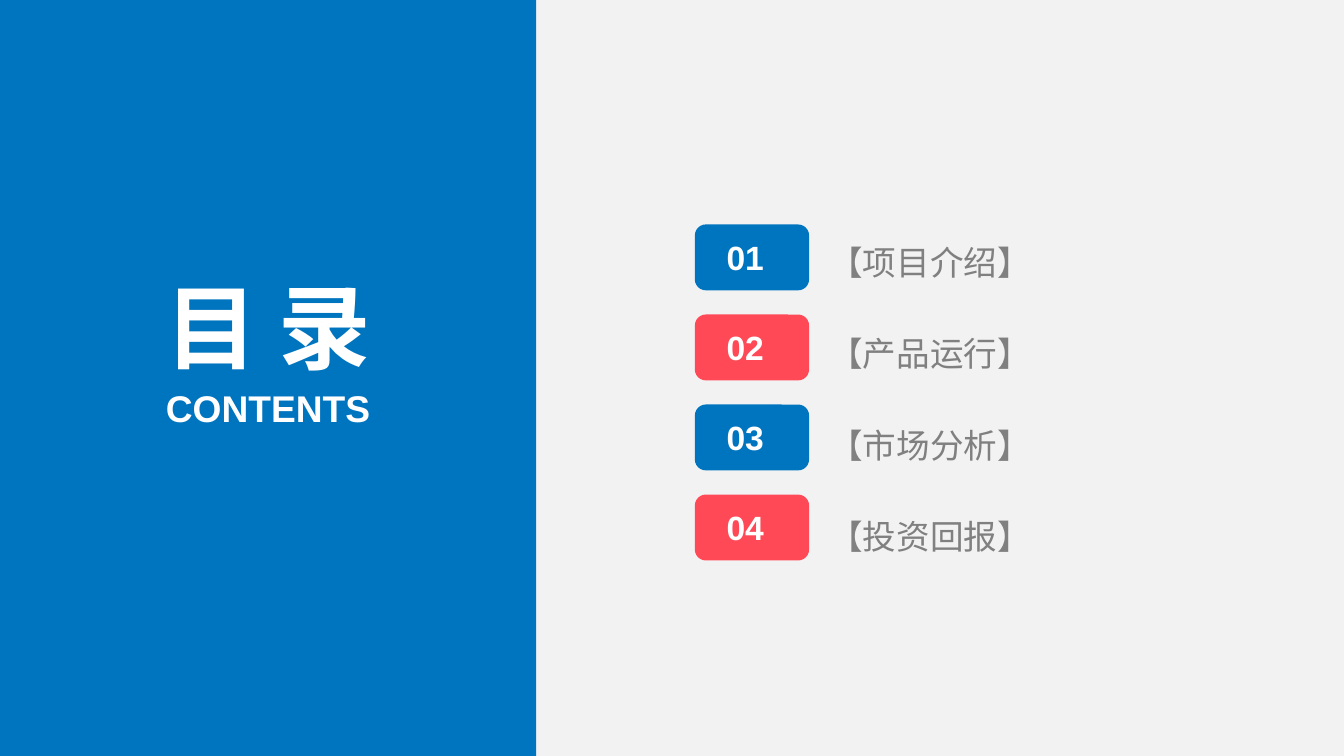
from pptx import Presentation
from pptx.dml.color import RGBColor
from pptx.enum.shapes import MSO_SHAPE
from pptx.enum.text import MSO_ANCHOR, MSO_AUTO_SIZE, PP_ALIGN
from pptx.util import Inches, Pt

RECTANGLE, ROUNDED = MSO_SHAPE.RECTANGLE, MSO_SHAPE.ROUNDED_RECTANGLE
TOP, MIDDLE = MSO_ANCHOR.TOP, MSO_ANCHOR.MIDDLE
CENTER, LEFT = PP_ALIGN.CENTER, PP_ALIGN.LEFT
GROW, FIXED = MSO_AUTO_SIZE.SHAPE_TO_FIT_TEXT, MSO_AUTO_SIZE.NONE

# Content
TITLE = "目 录"
SUBTITLE = "CONTENTS"
SECTIONS = ["【项目介绍】", "【产品运行】", "【市场分析】", "【投资回报】"]

# Style and layout, in inches
COLORS = {"blue": "0075BF", "red": "FF4957", "white": "FFFFFF",
          "gray": "808080", "background": "F2F2F2"}
BADGE_COLORS = ["blue", "red"]
FONT = "Arial"
SLIDE_WIDTH = 10
SLIDE_HEIGHT = SLIDE_WIDTH * 9 / 16
PANEL_WIDTH = 3.99
BADGE_TOP, LABEL_TOP = 1.67, 1.61
BADGE_PITCH, LABEL_PITCH = 0.67, 0.68


def color(name):
    return RGBColor.from_string(COLORS[name])


def place(shape, left, top, width, height):
    shape.left, shape.top = Inches(left), Inches(top)
    shape.width, shape.height = Inches(width), Inches(height)


def write(shape, text, size, color_name, bold=False, align=CENTER, anchor=TOP,
          insets=(0, 0, 0, 0), wrap=False, fit=GROW):
    frame = shape.text_frame
    frame.word_wrap, frame.auto_size, frame.vertical_anchor = wrap, fit, anchor
    (frame.margin_left, frame.margin_top,
     frame.margin_right, frame.margin_bottom) = map(Inches, insets)
    paragraph = frame.paragraphs[0]
    paragraph.alignment = align
    run = paragraph.add_run()
    run.text = text
    run.font.name, run.font.size, run.font.bold = FONT, Pt(size), bold
    run.font.color.rgb = color(color_name)
    return paragraph


def add_block(slide, kind, box, color_name):
    shape = slide.shapes.add_shape(kind, *map(Inches, box))
    shape.shadow.inherit = False
    shape.fill.solid()
    shape.fill.fore_color.rgb = color(color_name)
    shape.line.fill.background()
    return shape


presentation = Presentation()
presentation.slide_width = Inches(SLIDE_WIDTH)
presentation.slide_height = Inches(SLIDE_HEIGHT)
slide = presentation.slides.add_slide(presentation.slide_layouts[5])
slide.background.fill.solid()
slide.background.fill.fore_color.rgb = color("background")

# Left panel, sent behind the title placeholder
panel = add_block(slide, RECTANGLE, (0, 0, PANEL_WIDTH, SLIDE_HEIGHT), "blue")
title = slide.shapes.title
title._element.addprevious(panel._element)

# Title and subtitle, centred on the panel
title_width, subtitle_width = 1.58, 1.53
place(title, (PANEL_WIDTH - title_width) / 2, 2.01, title_width, 0.83)
write(title, TITLE, 49.5, "white", bold=True)
subtitle = slide.shapes.add_textbox(0, 0, 0, 0)
place(subtitle, (PANEL_WIDTH - subtitle_width) / 2, 2.87, subtitle_width, 0.34)
write(subtitle, SUBTITLE, 19.9, "white", bold=True)

# Numbered badges with section names
for index, section in enumerate(SECTIONS):
    badge = add_block(slide, ROUNDED,
                      (5.17, BADGE_TOP + index * BADGE_PITCH, 0.85, 0.49),
                      BADGE_COLORS[index % len(BADGE_COLORS)])
    write(badge, f"{index + 1:02d}", 18, "white", bold=True, anchor=MIDDLE,
          insets=(0.06, 0.03, 0.16, 0.03), fit=FIXED)

    label = slide.shapes.add_textbox(0, 0, 0, 0)
    place(label, 6.1, LABEL_TOP + index * LABEL_PITCH, 2.84, 0.48)
    paragraph = write(label, section, 18, "gray", align=LEFT,
                      insets=(0.07, 0.04, 0.07, 0.04), wrap=True)
    paragraph.line_spacing = 1.5
    paragraph.space_before = Pt(5.7)

presentation.save("out.pptx")
